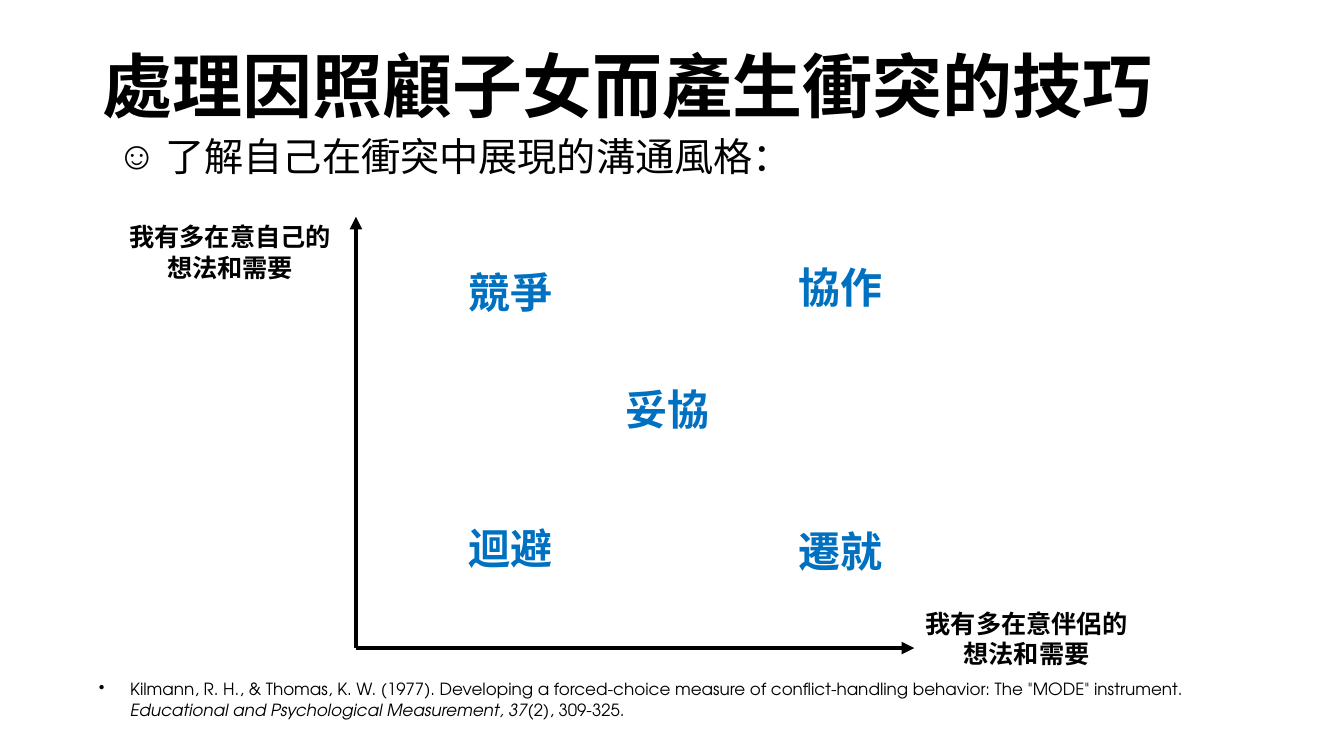
from lxml.etree import SubElement
from pptx import Presentation
from pptx.dml.color import RGBColor
from pptx.enum.shapes import MSO_CONNECTOR
from pptx.enum.text import MSO_ANCHOR, MSO_AUTO_SIZE, PP_ALIGN
from pptx.oxml.ns import qn
from pptx.util import Cm, Pt

SANS = "Noto Sans CJK SC"
LABEL_SANS = "Noto Sans CJK TC"
LATIN = "TeX Gyre Adventor"
BLACK = "000000"
BLUE = "0070C0"
CONFLICT_STYLES = [
    ("競爭", 7.72, 0.81),
    ("協作", 16.03, 0.69),
    ("妥協", 11.69, 3.76),
    ("迴避", 7.72, 7.27),
    ("遷就", 16.03, 7.34),
]
CITATION = [
    ("Kilmann, R. H., & Thomas, K. W. (1977). Developing a forced-choice measure of "
     'conflict-handling behavior: The "MODE" instrument. ', False),
    ("Educational and Psychological Measurement, 37", True),
    ("(2), 309-325.", False),
]


def color(hex_code):
    """Turn a hex string into a colour."""
    return RGBColor.from_string(hex_code)


def place(part, left, top, width, height):
    """Move and size a part, in centimetres."""
    part.left, part.top = Cm(left), Cm(top)
    part.width, part.height = Cm(width), Cm(height)


def style(paragraph, size, typeface=SANS, hex_code=BLACK, bold=False):
    """Format a whole paragraph, East Asian characters included."""
    font = paragraph.font
    font.size, font.bold, font.name = Pt(size), bold, typeface
    font.color.rgb = color(hex_code)
    defaults = paragraph._p.pPr.find(qn("a:defRPr"))
    SubElement(defaults, qn("a:ea")).set("typeface", typeface)


def add_bullet(paragraph, symbol, indent):
    """Give a paragraph a bullet with a hanging indent in centimetres."""
    properties = paragraph._p.get_or_add_pPr()
    properties.set("marL", str(Cm(indent)))
    properties.set("indent", str(-Cm(indent)))
    SubElement(properties, qn("a:buChar")).set("char", symbol)


def add_text(slide, left, top, width, height):
    """Add a wrapping text box and return its frame."""
    frame = slide.shapes.add_textbox(Cm(left), Cm(top), Cm(width), Cm(height)).text_frame
    frame.word_wrap = True
    return frame


def add_heading(slide, left, top, width, height):
    """Fill the title placeholder."""
    heading = slide.shapes.title
    place(heading, left, top, width, height)
    frame = heading.text_frame
    frame.text = "處理因照顧子女而產生衝突的技巧"
    frame.vertical_anchor = MSO_ANCHOR.MIDDLE
    frame.auto_size = MSO_AUTO_SIZE.NONE
    paragraph = frame.paragraphs[0]
    paragraph.alignment = PP_ALIGN.LEFT
    paragraph.line_spacing = 0.9
    style(paragraph, 50, bold=True)


def add_lead(slide, left, top, width, height):
    """Fill the body placeholder with the bulleted lead line."""
    lead = slide.placeholders[1]
    place(lead, left, top, width, height)
    frame = lead.text_frame
    frame.text = " 了解自己在衝突中展現的溝通風格："
    frame.auto_size = MSO_AUTO_SIZE.NONE
    paragraph = frame.paragraphs[0]
    add_bullet(paragraph, "☺", 0.64)
    paragraph.line_spacing = 0.9
    paragraph.space_before = Pt(10)
    style(paragraph, 28)


def add_axis(slide, start, end):
    """Draw one arrow of the matrix between two points."""
    axis = slide.shapes.add_connector(
        MSO_CONNECTOR.STRAIGHT, *map(Cm, start), *map(Cm, end))
    axis.line.color.rgb = color(BLACK)
    axis.line.width = Pt(3)
    SubElement(axis.line._get_or_add_ln(), qn("a:tailEnd")).set("type", "triangle")
    SubElement(axis._element.spPr, qn("a:effectLst"))


def add_axis_label(slide, label, left, top):
    """Write the name of an axis."""
    frame = add_text(slide, left, top, 5.66, 1.8)
    frame.text = label
    paragraph = frame.paragraphs[0]
    paragraph.alignment = PP_ALIGN.CENTER
    style(paragraph, 18, LABEL_SANS, bold=True)


def add_conflict_matrix(slide, left, top, width, height):
    """Draw both axes and the five conflict styles in a box."""
    label_width, label_rise = 5.66, 1.12
    origin = (left + 6, top + height)
    partner_end = left + width - label_width
    add_axis(slide, origin, (partner_end, origin[1]))
    add_axis(slide, origin, (origin[0], top))
    add_axis_label(slide, "我有多在意自己的想法和需要", left, top)
    add_axis_label(slide, "我有多在意伴侶的想法和需要", partner_end, origin[1] - label_rise)
    for name, across, down in CONFLICT_STYLES:
        frame = add_text(slide, left + across, top + down, 4.34, 2.16)
        frame.text = name
        frame.vertical_anchor = MSO_ANCHOR.MIDDLE
        paragraph = frame.paragraphs[0]
        paragraph.alignment = PP_ALIGN.CENTER
        style(paragraph, 30, hex_code=BLUE, bold=True)


def add_citation(slide, left, top, width, height):
    """Write the bulleted reference with its italic part."""
    paragraph = add_text(slide, left, top, width, height).paragraphs[0]
    add_bullet(paragraph, "•", 0.79)
    style(paragraph, 12, LATIN)
    for words, italic in CITATION:
        run = paragraph.add_run()
        run.text = words
        run.font.italic = italic


def main():
    """Build the slide and save it."""
    deck = Presentation()
    deck.slide_width, deck.slide_height = Cm(33.87), Cm(19.05)
    slide = deck.slides.add_slide(deck.slide_layouts[1])
    add_heading(slide, 2.34, 0.43, 29.21, 3.68)
    add_lead(slide, 2.69, 3.33, 29.21, 1.57)
    add_conflict_matrix(slide, 2.97, 5.46, 25.73, 10.87)
    add_citation(slide, 2.24, 16.99, 29.21, 1.27)
    deck.save("out.pptx")


if __name__ == "__main__":
    main()
